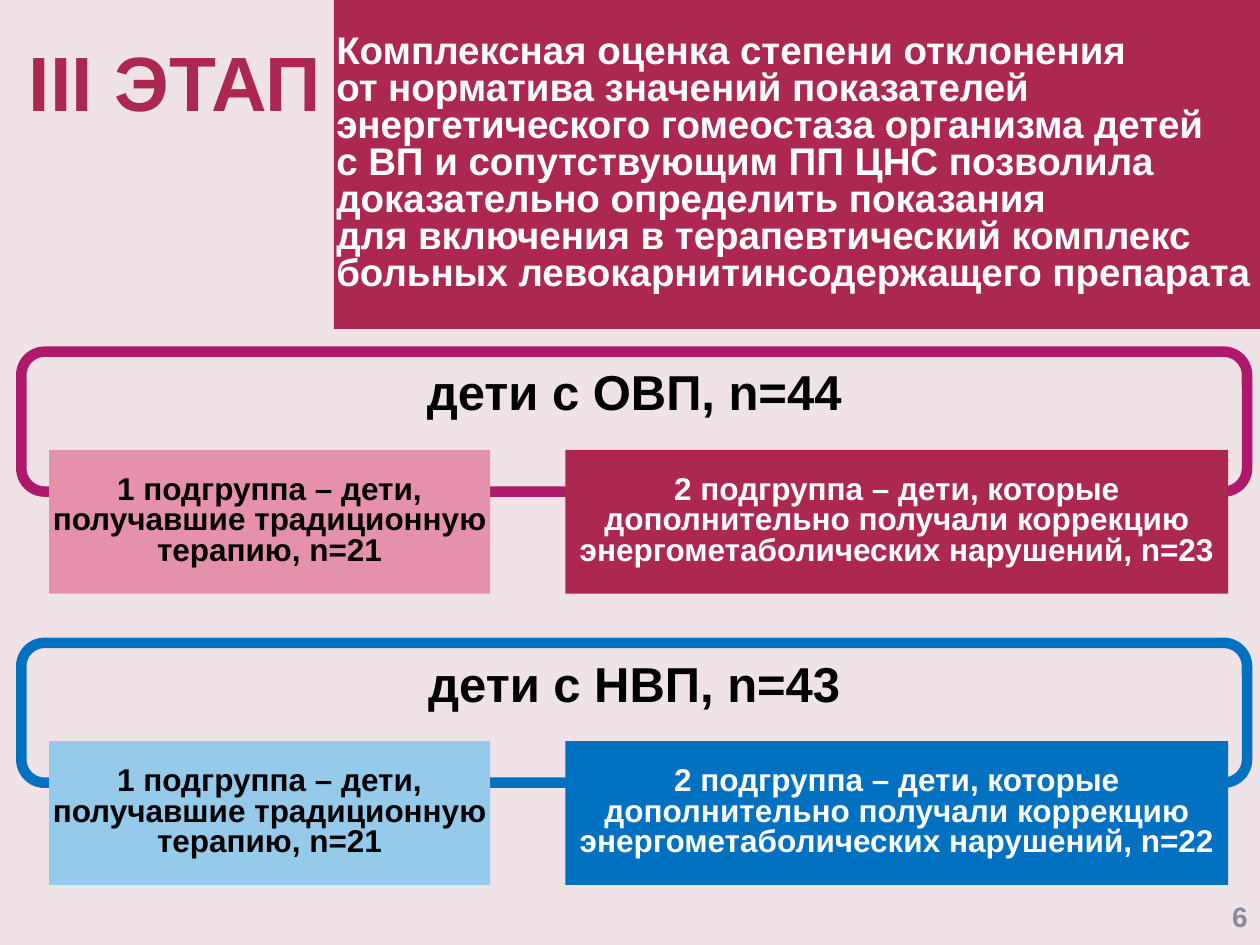
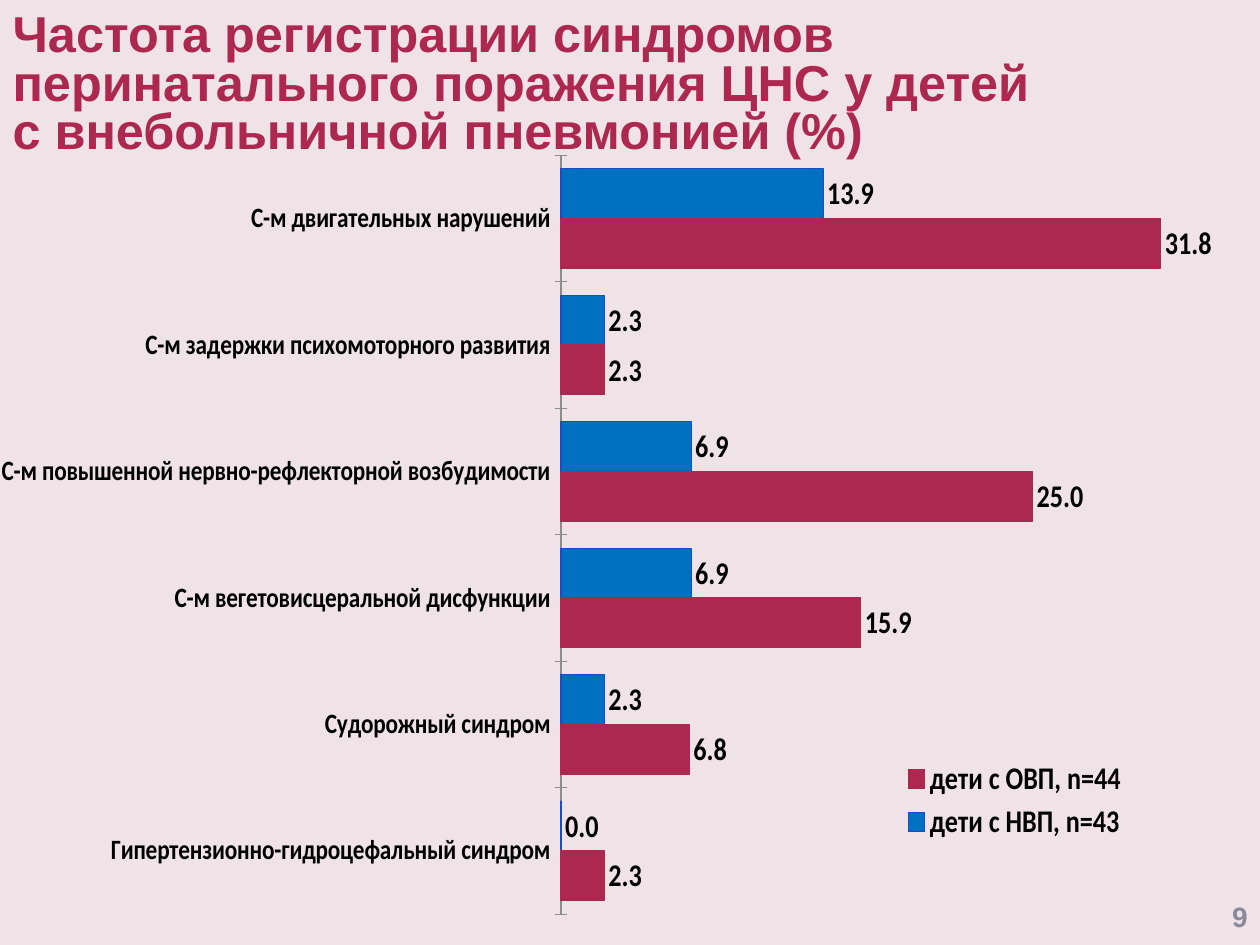
import pptx
import pptx.util
import pptx.chart.data
import pptx.dml.color
import pptx.enum.chart
import pptx.enum.shapes
import pptx.enum.text
import pptx.oxml
import pptx.oxml.ns

Cm = pptx.util.Cm
Pt = pptx.util.Pt
RGB = pptx.dml.color.RGBColor.from_string
Align = pptx.enum.text.PP_ALIGN
Anchor = pptx.enum.text.MSO_ANCHOR
Form = pptx.enum.shapes.MSO_SHAPE
Kind = pptx.enum.chart
qn = pptx.oxml.ns.qn

hues = {
    "back": "EFE3E8", "wine": "AD2851", "plum": "B0186B", "pink": "E691AB",
    "blue": "0070C0", "sky": "95CAEA", "edge": "1A4CC8", "axis": "8C8C8C",
    "black": "000000", "white": "FFFFFF", "grey": "8A8A9C",
}
tight = {"margin_left": Cm(0.05), "margin_right": Cm(0.05),
         "margin_top": Cm(0.03), "margin_bottom": Cm(0.03)}


def write(shape, text, size, hue, align=Align.LEFT, after=0, **extra):
    frame = shape.text_frame
    frame.text = text
    frame.auto_size = pptx.enum.text.MSO_AUTO_SIZE.NONE
    para = frame.paragraphs[0]
    looks = [
        (frame, {"word_wrap": True, "vertical_anchor": Anchor.MIDDLE, **extra}),
        (para, {"alignment": align, "line_spacing": 0.8,
                "space_before": Pt(0), "space_after": Pt(after)}),
    ]
    for run in para.runs:
        looks.append((run.font, {"name": "Arial", "size": Pt(size), "bold": True}))
        run.font.color.rgb = RGB(hues[hue])
    for item, look in looks:
        for key, value in look.items():
            setattr(item, key, value)


def place(node, slot, inner, x, y, w, h):
    for old in node.findall(qn("c:layout")):
        node.remove(old)
    target = '<c:layoutTarget val="inner"/>' if inner else ""
    sides = "".join(f'<c:{k} val="{v}"/>' for k, v in zip("xywh", (x, y, w, h)))
    modes = '<c:xMode val="edge"/><c:yMode val="edge"/>'
    node.insert(slot, pptx.oxml.parse_xml(
        f'<c:layout {pptx.oxml.ns.nsdecls("c")}><c:manualLayout>'
        f"{target}{modes}{sides}</c:manualLayout></c:layout>"))


deck = pptx.Presentation()
deck.slide_width, deck.slide_height = Cm(25.4), Cm(19.05)
fill = deck.slide_master.background.fill
fill.solid()
fill.fore_color.rgb = RGB(hues["back"])

heads = [
    ("III ЭТАП", 44, 0.33, 0.53, 24.77, "6"),
    ("Частота регистрации синдромов перинатального поражения ЦНС у детей "
     "\vс внебольничной пневмонией (%)", 28.8, 0, 0.48, 25.12, "9"),
]
slides = []
for text, size, x, y, w, page in heads:
    slide = deck.slides.add_slide(deck.slide_layouts[5])
    title = slide.shapes.title
    title.left, title.top, title.width, title.height = Cm(x), Cm(y), Cm(w), Cm(2.54)
    write(title, text, size, "wine", after=6)
    foot = slide.shapes.add_textbox(Cm(19.68), Cm(18.03), Cm(5.72), Cm(1.02))
    write(foot, page, 16, "grey", Align.RIGHT, 6)
    slides.append(slide)

stage, rates = slides

groups = [
    ("дети с ОВП, n=44", "plum", "pink", "wine", 23),
    ("дети с НВП, n=43", "blue", "sky", "blue", 22),
]
for row, (name, rim, light, dark, count) in enumerate(groups):
    top = 7.09 + 5.87 * row
    ring = stage.shapes.add_shape(
        Form.ROUNDED_RECTANGLE, Cm(0.43), Cm(top), Cm(24.71), Cm(2.82))
    ring.shadow.inherit = False
    ring.fill.background()
    ring.line.color.rgb = RGB(hues[rim])
    ring.line.width = Pt(6)
    write(ring, name, 28, "black", Align.CENTER,
          **{**tight, "margin_top": Cm(0.3), "vertical_anchor": Anchor.TOP})
    parts = [
        (0.99, 8.89, light, "black",
         "1 подгруппа – дети, получавшие традиционную терапию, n=21"),
        (11.4, 13.36, dark, "white",
         "2 подгруппа – дети, которые дополнительно получали коррекцию "
         f"энергометаболических нарушений, n={count}"),
    ]
    for x, w, hue, ink, text in parts:
        box = stage.shapes.add_shape(
            Form.RECTANGLE, Cm(x), Cm(top + 1.98), Cm(w), Cm(2.9))
        box.shadow.inherit = False
        box.fill.solid()
        box.fill.fore_color.rgb = RGB(hues[hue])
        box.line.fill.background()
        write(box, text, 18, ink, Align.CENTER, **tight)

claim = stage.shapes.add_shape(Form.RECTANGLE, Cm(6.73), Cm(0), Cm(18.67), Cm(6.63))
claim.shadow.inherit = False
claim.fill.solid()
claim.fill.fore_color.rgb = RGB(hues["wine"])
claim.line.fill.background()
write(claim,
      "Комплексная оценка степени отклонения \vот норматива значений показателей "
      "энергетического гомеостаза организма детей \vс ВП и сопутствующим ПП ЦНС "
      "позволила доказательно определить показания \vдля включения в терапевтический "
      "комплекс больных левокарнитинсодержащего препарата",
      22, "white", **tight)

data = pptx.chart.data.CategoryChartData(number_format="#,##0.0")
data.categories = [
    "С-м двигательных нарушений",
    "С-м задержки психомоторного развития",
    "С-м повышенной нервно-рефлекторной возбудимости",
    "С-м вегетовисцеральной дисфункции",
    "Судорожный синдром",
    "Гипертензионно-гидроцефальный синдром",
]
data.add_series(groups[1][0], (13.9, 2.3, 6.9, 6.9, 2.3, 0))
data.add_series(groups[0][0], (31.8, 2.3, 25, 15.9, 6.8, 2.3))
chart = rates.shapes.add_chart(
    Kind.XL_CHART_TYPE.BAR_CLUSTERED,
    Cm(0.03), Cm(3.12), Cm(24.74), Cm(15.32), data).chart
chart.has_title = False
chart.has_legend = True
plot = chart.plots[0]
plot.has_data_labels = True
names, scale = chart.category_axis, chart.value_axis
marks, legend = plot.data_labels, chart.legend

looks = [
    (plot, {"gap_width": 54, "overlap": 0, "vary_by_categories": False}),
    (names, {"reverse_order": True, "has_major_gridlines": False,
             "major_tick_mark": Kind.XL_TICK_MARK.CROSS}),
    (scale, {"visible": False, "has_major_gridlines": False,
             "minimum_scale": 0, "maximum_scale": 35.4}),
    (marks, {"show_value": True, "number_format": "#,##0.0",
             "number_format_is_linked": False,
             "position": Kind.XL_LABEL_POSITION.OUTSIDE_END}),
    (legend, {"position": Kind.XL_LEGEND_POSITION.RIGHT, "include_in_layout": True}),
]
for item, size in ((chart, 18), (names.tick_labels, 16), (marks, 18), (legend, 18)):
    looks.append((item.font, {"name": "Calibri", "size": Pt(size), "bold": True}))
    item.font.color.rgb = RGB(hues["black"])
for item, look in looks:
    for key, value in look.items():
        setattr(item, key, value)
names.format.line.color.rgb = RGB(hues["axis"])

for bars, hue, edge in zip(plot.series, ("blue", "wine"), ("edge", "wine")):
    bars.format.fill.solid()
    bars.format.fill.fore_color.rgb = RGB(hues[hue])
    bars.format.line.color.rgb = RGB(hues[edge])
    bars.format.line.width = Pt(0.75)

area = chart.element.find(".//" + qn("c:plotArea"))
key = chart.element.find(".//" + qn("c:legend"))
place(area, 0, True, 0.345, 0, 0.655, 1)
place(key, 1, False, 0.68, 0.79, 0.22, 0.12)

deck.save("out.pptx")
